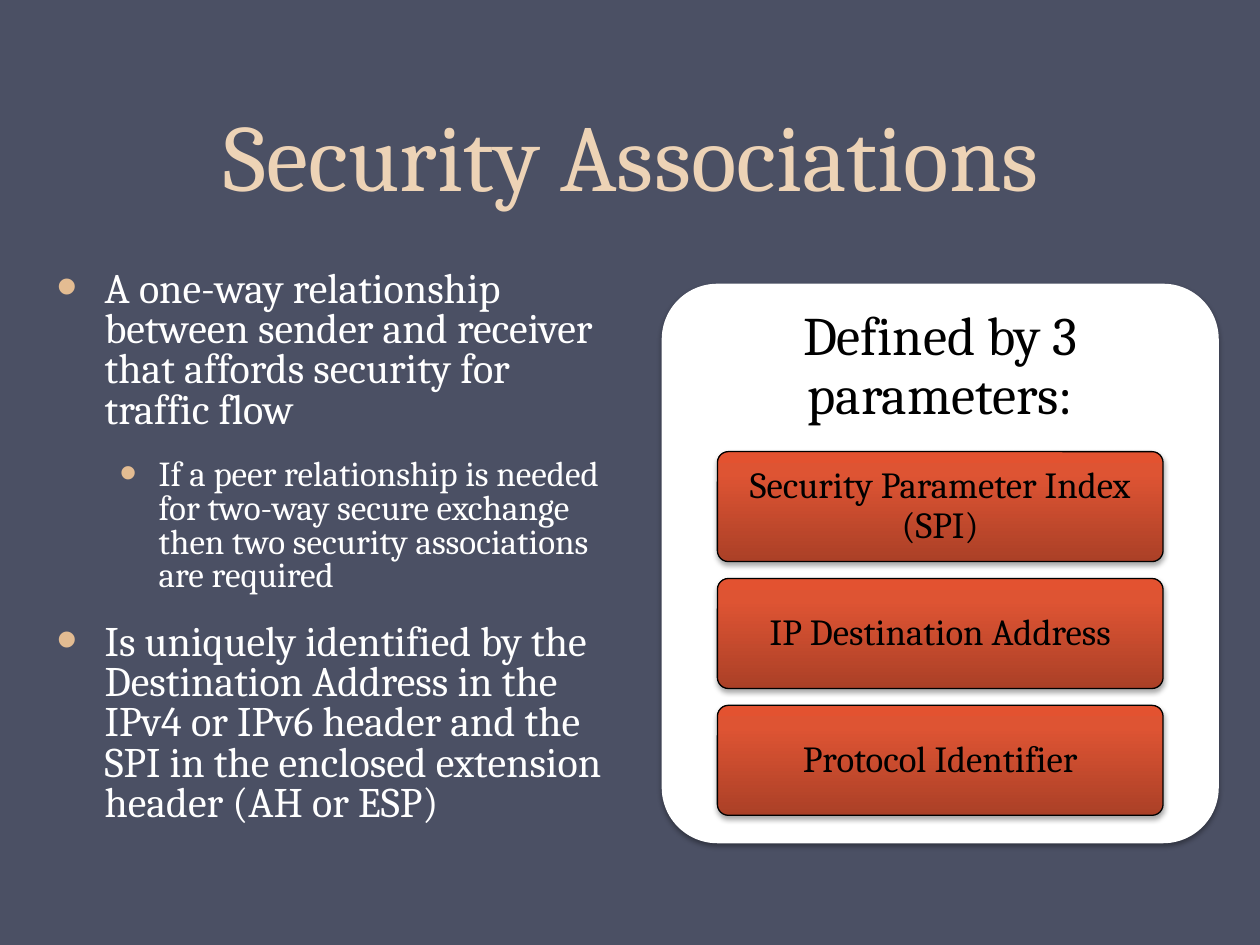
from copy import deepcopy
from dataclasses import dataclass

from lxml.etree import SubElement as Sub
from pptx import Presentation
from pptx.dml.color import RGBColor as RGB
from pptx.enum.shapes import MSO_SHAPE as Shape
from pptx.enum.text import MSO_ANCHOR as Anchor, PP_ALIGN as Align
from pptx.oxml.ns import qn
from pptx.util import Cm, Pt


@dataclass(frozen=True)
class Theme:
    font: str = "Cambria"
    back: str = "4B5064"
    title: str = "EDD3B6"
    body: str = "FFFFFF"
    dot: str = "E3BC92"
    card: str = "FFFFFF"
    ink: str = "000000"
    fade: tuple = ((0, "AB4027"), (0.8, "DE5433"), (1, "E35230"))
    big: int = 54
    head: int = 31
    item: int = 21
    sizes: tuple = (24, 20)
    indents: tuple = ((0.97, 0.97), (2.06, 0.79))


@dataclass(frozen=True)
class Box:
    x: float
    y: float
    w: float
    h: float

    def area(self):
        return [Cm(v) for v in (self.x, self.y, self.w, self.h)]


THEME = Theme()
POINTS = (
    (0, "A one-way relationship between sender and receiver that affords "
        "security for traffic flow"),
    (1, "If a peer relationship is needed for two-way secure exchange then "
        "two security associations are required"),
    (0, "Is uniquely identified by the Destination Address in the IPv4 or "
        "IPv6 header and the SPI in the enclosed extension header (AH or ESP)"),
)
ITEMS = ("Security Parameter Index (SPI)", "IP Destination Address",
         "Protocol Identifier")


def assign(obj, form):
    for name, value in form.items():
        setattr(obj, name, value)


def write(para, text, size, color, **form):
    run = para.add_run()
    run.text = text
    assign(run.font, {"name": THEME.font, "size": Pt(size)})
    run.font.color.rgb = RGB.from_string(color)
    assign(para, form)


def frame(shape, anchor, x=0.25, y=0.13):
    """Set up wrapping, anchor and margins; return the text frame."""
    text = shape.text_frame
    assign(text, {"word_wrap": True, "vertical_anchor": anchor,
                  "margin_left": Cm(x), "margin_right": Cm(x),
                  "margin_top": Cm(y), "margin_bottom": Cm(y)})
    return text


def add_dot(para, level):
    props = para._p.get_or_add_pPr()
    left, hang = THEME.indents[level]
    props.set("marL", str(Cm(left)))
    props.set("indent", str(-Cm(hang)))
    Sub(Sub(props, qn("a:buClr")), qn("a:srgbClr"), val=THEME.dot)
    Sub(props, qn("a:buSzPct"), val="140000")
    Sub(props, qn("a:buFont"), typeface="Arial")
    Sub(props, qn("a:buChar"), char="•")


def add_panel(slide, box):
    """Add a rounded rectangle with a soft shadow below it."""
    panel = slide.shapes.add_shape(Shape.ROUNDED_RECTANGLE, *box.area())
    panel.adjustments[0] = 0.1
    panel.shadow.inherit = False
    glow = Sub(panel._element.spPr.find(qn("a:effectLst")), qn("a:outerShdw"),
               blurRad=str(Pt(3.1)), dist=str(Pt(1.8)), dir="5400000",
               rotWithShape="0")
    color = Sub(glow, qn("a:srgbClr"), val="000000")
    Sub(color, qn("a:alpha"), val="35000")
    return panel


def add_fade(shape):
    fill = shape.fill
    fill.gradient()
    fill.gradient_angle = 90
    stops = shape._element.spPr.find(".//" + qn("a:gsLst"))
    stops.append(deepcopy(stops[-1]))
    for stop, (place, color) in zip(fill.gradient_stops, THEME.fade):
        stop.position = place
        stop.color.rgb = RGB.from_string(color)


def add_title(slide, box, text):
    area = frame(slide.shapes.add_textbox(*box.area()), Anchor.BOTTOM)
    write(area.paragraphs[0], text, THEME.big, THEME.title,
          alignment=Align.CENTER, line_spacing=Pt(58))


def add_points(slide, box, points):
    area = frame(slide.shapes.add_textbox(*box.area()), Anchor.TOP)
    for i, (level, text) in enumerate(points):
        para = area.add_paragraph() if i else area.paragraphs[0]
        size = THEME.sizes[level]
        write(para, text, size, THEME.body, level=level, line_spacing=0.8,
              space_before=Pt(size * 0.2), space_after=Pt(12))
        add_dot(para, level)


def add_item(slide, box, text):
    item = add_panel(slide, box)
    add_fade(item)
    item.line.color.rgb = RGB.from_string(THEME.ink)
    item.line.width = Pt(0.75)
    area = frame(item, Anchor.MIDDLE, 0.15, 0.1)
    write(area.paragraphs[0], text, THEME.item, THEME.ink,
          alignment=Align.CENTER, line_spacing=0.9)


def add_card(slide, box, head, items):
    """Heading in the top 30 %, items sharing the next 65 %."""
    card = add_panel(slide, box)
    card.fill.solid()
    card.fill.fore_color.rgb = RGB.from_string(THEME.card)
    card.line.fill.background()

    top = Box(box.x, box.y, box.w, box.h * 0.3)
    area = frame(slide.shapes.add_textbox(*top.area()), Anchor.MIDDLE,
                 0.33, 0.33)
    write(area.paragraphs[0], head, THEME.head, THEME.ink,
          alignment=Align.CENTER, line_spacing=0.9)

    ratio = 2 / 13  # gap to item height
    count = len(items)
    high = box.h * 0.65 / (count + (count - 1) * ratio)
    for i, text in enumerate(items):
        y = box.y + top.h + i * high * (1 + ratio)
        add_item(slide, Box(box.x + box.w * 0.1, y, box.w * 0.8, high), text)


def main():
    deck = Presentation()
    assign(deck, {"slide_width": Cm(25.4), "slide_height": Cm(19.05)})
    slide = deck.slides.add_slide(deck.slide_layouts[6])
    back = slide.background.fill
    back.solid()
    back.fore_color.rgb = RGB.from_string(THEME.back)

    add_title(slide, Box(1.3, -0.08, 22.86, 4.45), "Security Associations")
    add_points(slide, Box(0.89, 5.33, 11.86, 12.8), POINTS)
    add_card(slide, Box(13.34, 5.72, 11.23, 11.28),
             "Defined by 3 parameters:", ITEMS)
    deck.save("out.pptx")


if __name__ == "__main__":
    main()
